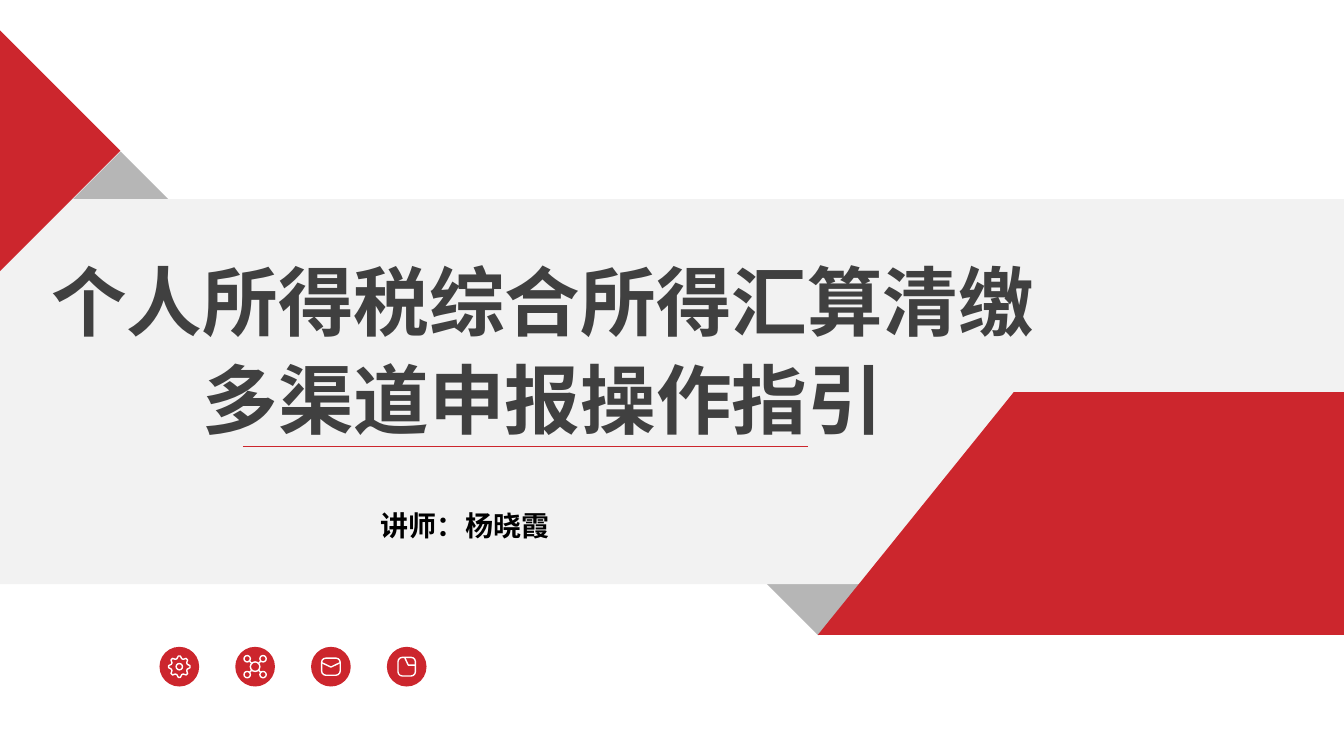
from math import cos, pi, sin

from lxml.etree import SubElement
from pptx import Presentation
from pptx.dml.color import RGBColor
from pptx.enum.shapes import MSO_CONNECTOR, MSO_SHAPE
from pptx.enum.text import MSO_ANCHOR, MSO_AUTO_SIZE, PP_ALIGN
from pptx.oxml.ns import qn
from pptx.util import Cm, Pt

COLORS = {"red": "CC262D", "grey": "B6B6B6", "band": "F2F2F2",
          "title": "404040", "black": "000000", "white": "FFFFFF"}
FONT = "Noto Sans CJK SC"
WIDTH, HEIGHT = 33.87, 19.05
ICON_LEFT, ICON_MIDDLE, ICON_STEP, ICON_RADIUS = 4.52, 16.8, 1.91, 0.5


class SlideBuilder:
    """Draws on one slide; all lengths are in centimetres."""

    def __init__(self, page):
        self.page = page
        self.shapes = page.shapes

    def paint(self, shape, fill=None, line=None, weight=1):
        shape.shadow.inherit = False
        if fill:
            shape.fill.solid()
            shape.fill.fore_color.rgb = RGBColor.from_string(COLORS[fill])
        else:
            shape.fill.background()
        if line:
            shape.line.color.rgb = RGBColor.from_string(COLORS[line])
            shape.line.width = Pt(weight)
        else:
            shape.line.fill.background()
        return shape

    def preset(self, kind, left, top, width, height, fill=None, line=None):
        shape = self.shapes.add_shape(kind, Cm(left), Cm(top), Cm(width), Cm(height))
        return self.paint(shape, fill, line)

    def circle(self, x, y, radius, fill=None, line=None):
        return self.preset(MSO_SHAPE.OVAL, x - radius, y - radius,
                           2 * radius, 2 * radius, fill, line)

    def corner(self, x, y, side, rotation, fill):
        """Right triangle whose unrotated square is centred on x, y."""
        shape = self.preset(MSO_SHAPE.RIGHT_TRIANGLE, x - side / 2, y - side / 2,
                            side, side, fill)
        shape.rotation = rotation

    def outline(self, points, fill=None, line=None, close=True):
        start, *others = [(Cm(x), Cm(y)) for x, y in points]
        builder = self.shapes.build_freeform(*start)
        builder.add_line_segments(others, close=close)
        return self.paint(builder.convert_to_shape(), fill, line)

    def line(self, x1, y1, x2, y2, color, weight):
        connector = self.shapes.add_connector(
            MSO_CONNECTOR.STRAIGHT, Cm(x1), Cm(y1), Cm(x2), Cm(y2))
        connector.line.color.rgb = RGBColor.from_string(COLORS[color])
        connector.line.width = Pt(weight)
        SubElement(connector.element.spPr, qn("a:effectLst"))

    def set_lines(self, box, lines, size, color, align, spacing=None):
        frame = box.text_frame
        frame.word_wrap = True
        frame.auto_size = MSO_AUTO_SIZE.NONE
        frame.vertical_anchor = MSO_ANCHOR.TOP
        for number, text in enumerate(lines):
            para = frame.add_paragraph() if number else frame.paragraphs[0]
            para.alignment = align
            para.space_before = Pt(0)
            if spacing:
                para.line_spacing = Pt(spacing)
            span = para.add_run()
            span.text = text
            span.font.size = Pt(size)
            span.font.bold = True
            span.font.color.rgb = RGBColor.from_string(COLORS[color])
            span.font.name = FONT
        for properties in box.element.iter(qn("a:rPr")):
            SubElement(properties, qn("a:ea")).set("typeface", FONT)

    def title(self, left, top, width, height, lines):
        box = self.shapes.title
        box.left, box.top, box.width, box.height = map(Cm, (left, top, width, height))
        box.element.getparent().append(box.element)  # bring in front of the band
        self.set_lines(box, lines, 54, "title", PP_ALIGN.CENTER, 70)

    def text(self, left, top, width, height, text, size, color):
        box = self.shapes.add_textbox(Cm(left), Cm(top), Cm(width), Cm(height))
        self.set_lines(box, [text], size, color, PP_ALIGN.LEFT)

    def gear_icon(self, x, y):
        teeth = []
        for step in range(32):
            radius = 0.27 if step % 4 < 2 else 0.21
            angle = (step - 0.5) * pi / 16
            teeth.append((x + radius * cos(angle), y + radius * sin(angle)))
        self.outline(teeth, line="white")
        self.circle(x, y, 0.08, line="white")

    def network_icon(self, x, y):
        self.circle(x, y, 0.12, line="white")
        for across in (-1, 1):
            for down in (-1, 1):
                self.line(x + 0.09 * across, y + 0.09 * down,
                          x + 0.14 * across, y + 0.14 * down, "white", 1)
                self.circle(x + 0.2 * across, y + 0.2 * down, 0.08, line="white")

    def folded_icon(self, x, y, width, height, fold):
        """Rounded sheet with a fold line given relative to its centre."""
        sheet = self.preset(MSO_SHAPE.ROUNDED_RECTANGLE, x - width / 2,
                            y - height / 2, width, height, line="white")
        sheet.adjustments[0] = 0.25
        self.outline([(x + dx, y + dy) for dx, dy in fold], line="white", close=False)

    def mail_icon(self, x, y):
        self.folded_icon(x, y, 0.47, 0.43, [(-0.23, -0.1), (0, 0.01), (0.23, -0.1)])

    def folder_icon(self, x, y):
        self.folded_icon(x, y, 0.44, 0.47, [(-0.05, -0.23), (0.04, -0.04), (0.22, -0.04)])


def main():
    deck = Presentation()
    deck.slide_width, deck.slide_height = Cm(WIDTH), Cm(HEIGHT)
    page = deck.slides.add_slide(deck.slide_layouts[5])
    draw = SlideBuilder(page)

    draw.corner(20.62, 12.17, 5.43, 315, "grey")
    draw.corner(3.04, 6.85, 4.29, 135, "grey")
    draw.preset(MSO_SHAPE.RECTANGLE, 0, 5.02, WIDTH, 9.7, "band")
    draw.outline([(25.55, 9.88), (WIDTH, 9.88), (WIDTH, 16), (20.61, 16)], "red")
    draw.corner(0, 3.8, 4.29, 225, "red")

    draw.title(0.25, 6.12, 26.85, 5.23,
               ["个人所得税综合所得汇算清缴", "多渠道申报操作指引"])
    draw.line(6.12, 11.25, 20.35, 11.25, "red", 0.5)
    draw.text(9.35, 12.7, 4.83, 1.12, "讲师：杨晓霞", 20, "black")

    icons = [draw.gear_icon, draw.network_icon, draw.mail_icon, draw.folder_icon]
    for number, draw_icon in enumerate(icons):
        x = ICON_LEFT + number * ICON_STEP
        draw.circle(x, ICON_MIDDLE, ICON_RADIUS, "red")
        draw_icon(x, ICON_MIDDLE)

    deck.save("out.pptx")


if __name__ == "__main__":
    main()
